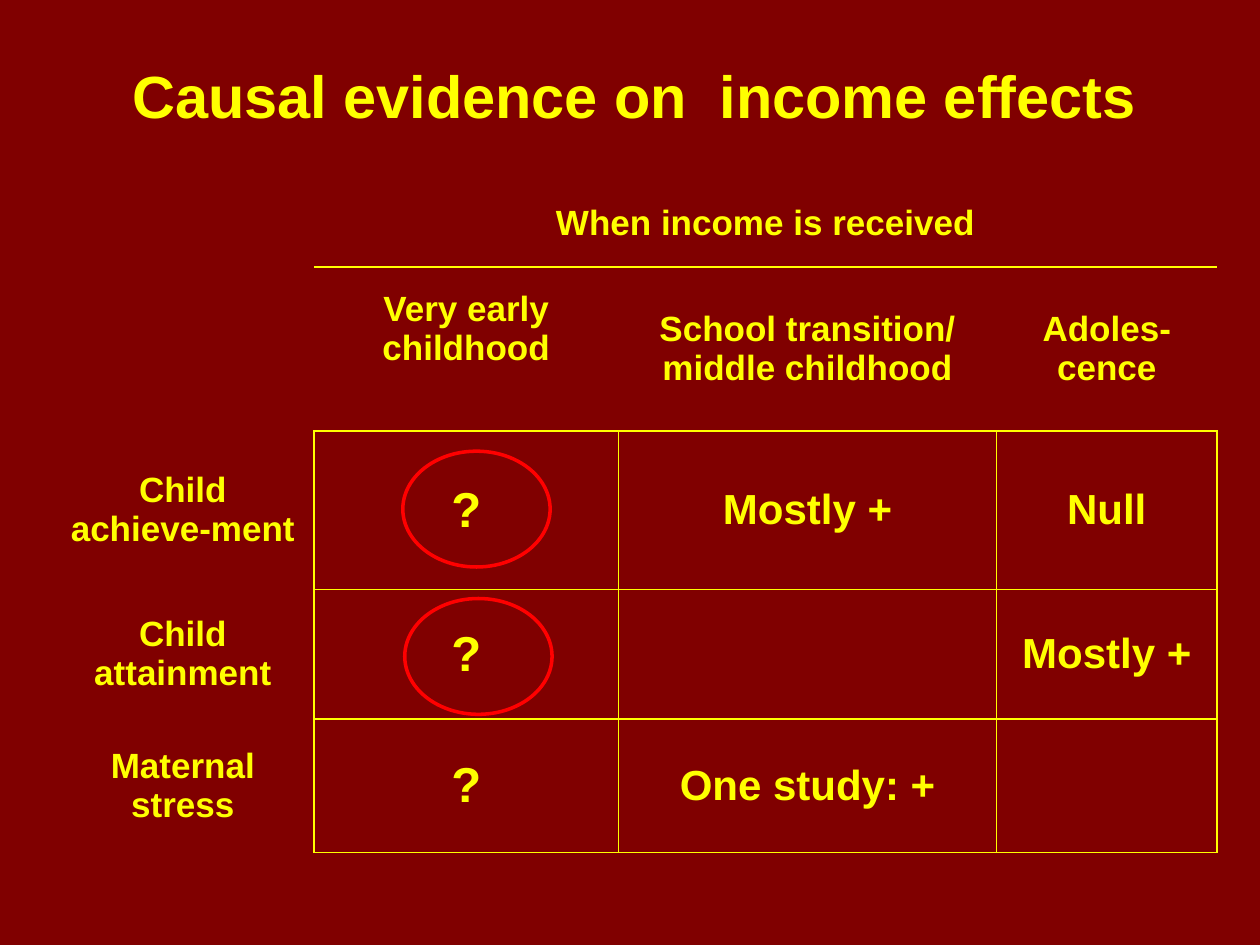
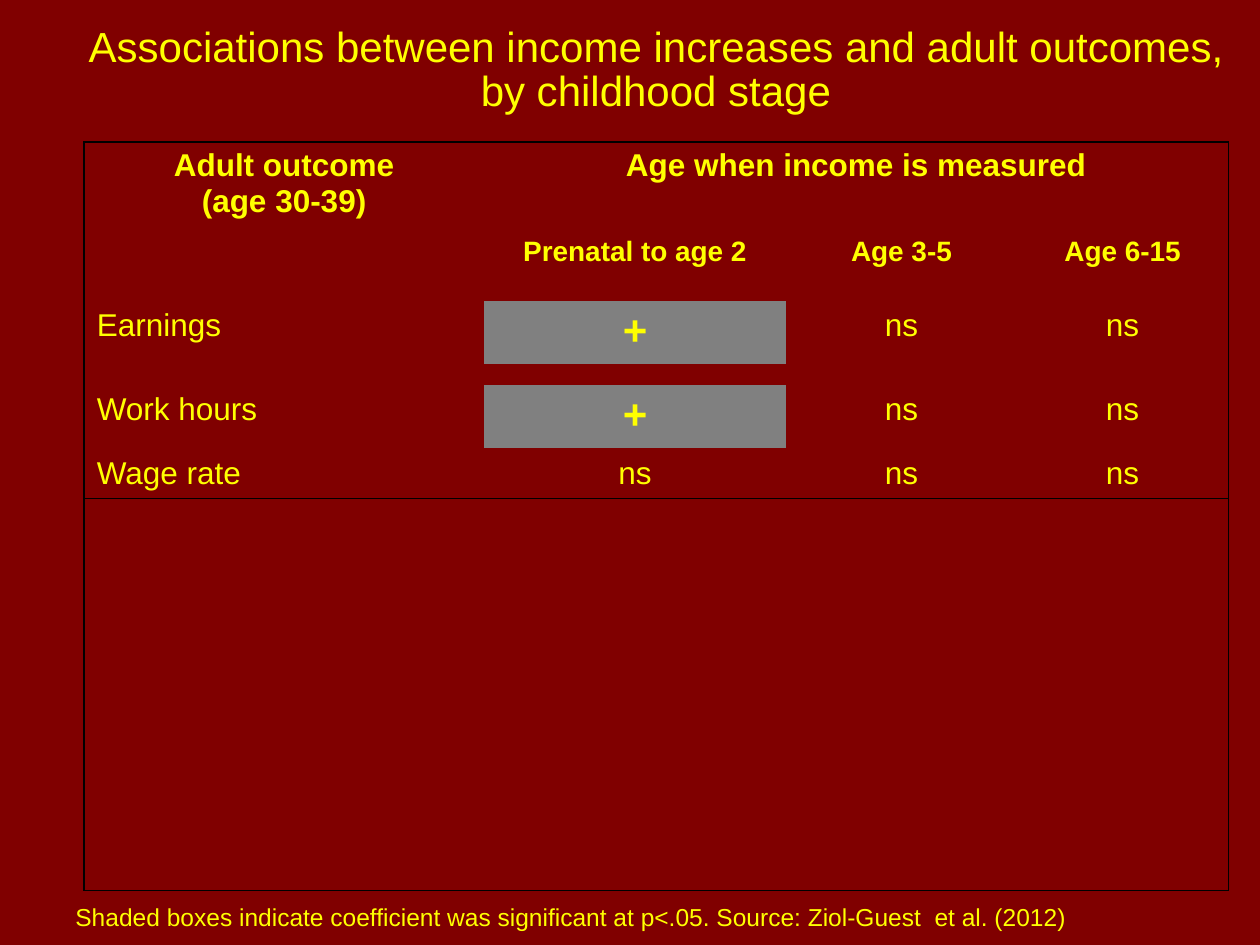
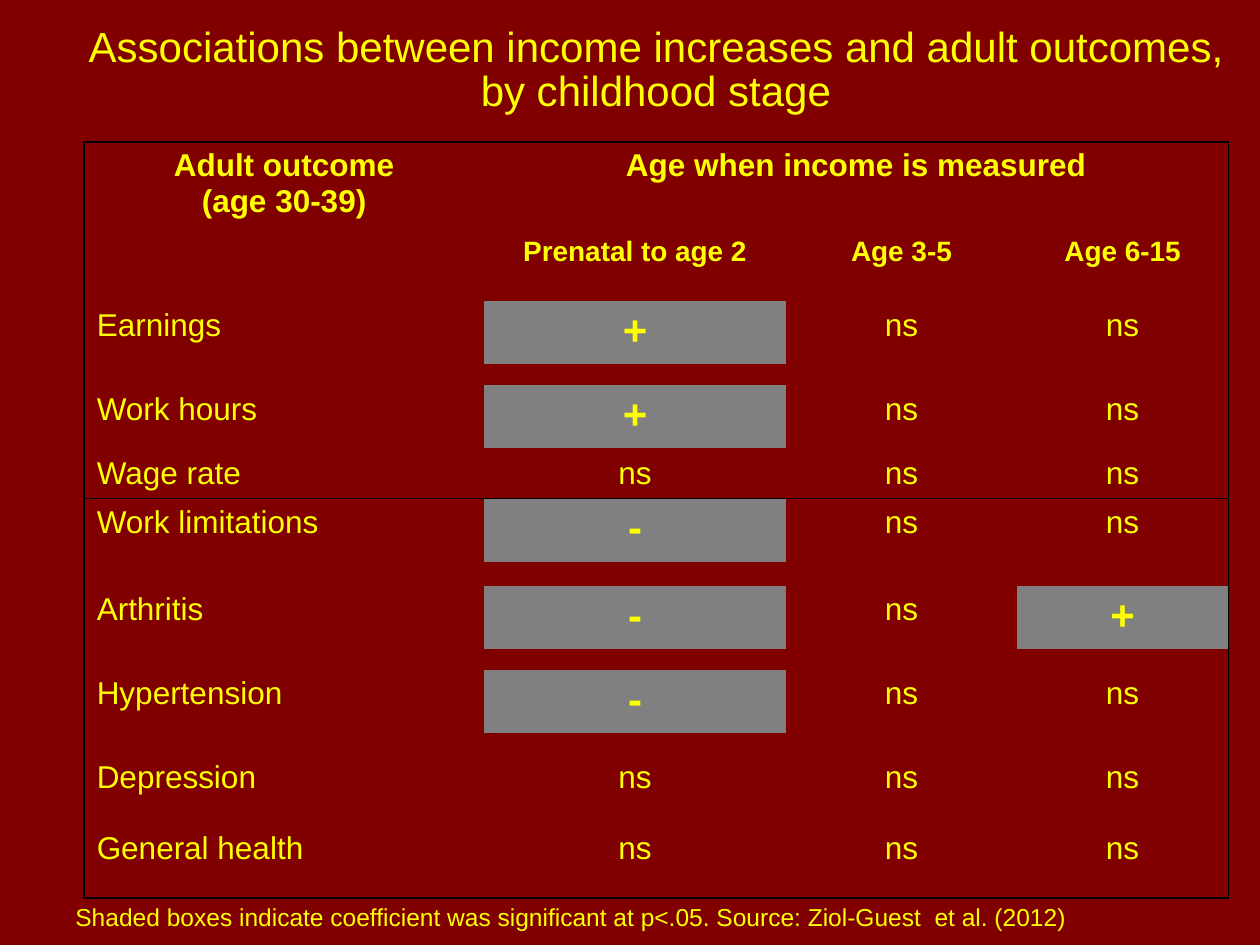
import pptx
import pptx.util
import pptx.dml.color
import pptx.enum.shapes
import pptx.enum.text
import pptx.oxml.ns
from lxml import etree

Pt = pptx.util.Pt
rgb = pptx.dml.color.RGBColor.from_string
qn = pptx.oxml.ns.qn
LEFT = pptx.enum.text.PP_ALIGN.LEFT
CENTER = pptx.enum.text.PP_ALIGN.CENTER
TOP = pptx.enum.text.MSO_ANCHOR.TOP
MIDDLE = pptx.enum.text.MSO_ANCHOR.MIDDLE

FONT = "Arial"
MAROON, YELLOW, RED, BLACK, GRAY = "800000", "FFFF00", "FF0000", "000000", "808080"


def write(tf, text, size, bold=False, align=CENTER, spacing=None):
    tf.word_wrap = True
    tf.text = text
    for p in tf.paragraphs:
        p.alignment = align
        if spacing:
            p.line_spacing = Pt(spacing)
        for r in p.runs:
            r.font.name, r.font.size, r.font.bold = FONT, Pt(size), bold
            r.font.color.rgb = rgb(YELLOW)
        if not p.runs:
            etree.SubElement(p._p, qn("a:endParaRPr"), sz=str(size * 100))


def style_cell(cell, sides, line, fill=None):
    tcPr = cell._tc.get_or_add_tcPr()
    for side in "LRTB":
        ln = etree.SubElement(tcPr, qn("a:ln" + side), w=str(Pt(1)))
        if side in sides:
            solid = etree.SubElement(ln, qn("a:solidFill"))
            etree.SubElement(solid, qn("a:srgbClr"), val=line)
        else:
            etree.SubElement(ln, qn("a:noFill"))
    if fill:
        cell.fill.solid()
        cell.fill.fore_color.rgb = rgb(fill)
    else:
        cell.fill.background()


prs = pptx.Presentation()
prs.slide_width, prs.slide_height = Pt(720), Pt(540)

# Three slides on the shared background, each with an unbanded table
tables = []
for left, top, widths, heights in [
    (29.6, 102.2, [149.8, 174.1, 216, 126], [50.4, 93.6, 90.7, 74, 76.2]),
] + 2 * [
    (48.1, 81.2, [228.5, 172.6, 21, 90, 21, 120.8],
     [48.6, 30.3, 10.2, 34.9, 12, 34.9, 27.9, 34.9, 13.7, 34.9, 12, 34.9, 12, 28, 11.4, 42.3]),
]:
    s = prs.slides.add_slide(prs.slide_layouts[6])
    s.background.fill.solid()
    s.background.fill.fore_color.rgb = rgb(MAROON)
    table = s.shapes.add_table(len(heights), len(widths), Pt(left), Pt(top),
                               Pt(sum(widths)), Pt(sum(heights))).table
    table.first_row = table.horz_banding = False
    for col, width in zip(table.columns, widths):
        col.width = Pt(width)
    for row, height in zip(table.rows, heights):
        row.height = Pt(height)
    table.cell(0, 1).merge(table.cell(0, len(widths) - 1))
    tables.append(table)

# Slide 1: causal evidence by stage
s, table = prs.slides[0], tables[0]
evidence = [
    ["", "When income is received", "", ""],
    ["", "Very early childhood", "School transition/ middle childhood", "Adoles-cence"],
    ["Child achieve-ment", "?", "Mostly +", "Null"],
    ["Child attainment", "?", "", "Mostly +"],
    ["Maternal stress", "?", "One study: +", ""],
]
for i, row in enumerate(evidence):
    for j, text in enumerate(row):
        cell = table.cell(i, j)
        if j == 0:
            sides = "R" if i > 1 else ""
        else:
            sides = ["B", "TB"][i] if i < 2 else "LRTB"
        size = 20 if i < 2 or j == 0 else 28 if text == "?" else 24
        write(cell.text_frame, text, size, True)
        cell.vertical_anchor = MIDDLE
        style_cell(cell, sides, YELLOW)
table.cell(1, 1).margin_bottom = Pt(26.6)

tb = s.shapes.add_textbox(Pt(47.5), Pt(30.2), Pt(630), Pt(48.2))
write(tb.text_frame, "Causal evidence on  income effects", 34, True)

# Rings around the open questions
for left, top in [(230.2, 257.8), (231.3, 342)]:
    ring = s.shapes.add_shape(pptx.enum.shapes.MSO_SHAPE.OVAL,
                              Pt(left), Pt(top), Pt(84.2), Pt(66.2))
    ring.shadow.inherit = False
    ring.fill.background()
    ring.line.color.rgb = rgb(RED)
    ring.line.width = Pt(2)

# Slides 2 and 3: adult outcomes, first the work rows and then all rows
headers = {
    (0, 0): "Adult outcome\n(age 30-39)",
    (0, 1): "Age when income is measured",
    (1, 1): "Prenatal to age 2",
    (1, 3): "Age 3-5",
    (1, 5): "Age 6-15",
}
outcomes = [
    (3, "Earnings", "+", "ns", "ns"),
    (5, "Work hours", "+", "ns", "ns"),
    (6, "Wage rate", "ns", "ns", "ns"),
    (7, "Work limitations", "-", "ns", "ns"),
    (9, "Arthritis", "-", "ns", "+"),
    (11, "Hypertension", "-", "ns", "ns"),
    (13, "Depression", "ns", "ns", "ns"),
    (15, "General health", "ns", "ns", "ns"),
]
for s, table, shown in zip(list(prs.slides)[1:], tables[1:], [3, 8]):
    texts = dict(headers)
    for i, *values in outcomes[:shown]:
        texts.update({(i, j): text for j, text in zip([0, 1, 3, 5], values)})

    for i in range(len(table.rows)):
        for j in range(len(table.columns)):
            cell, text = table.cell(i, j), texts.get((i, j), "")
            sides = "L" if j == 0 else ""
            sides += "R" if j == 5 or (i, j) == (0, 1) else ""
            sides += "T" if i in (0, 7) else ""
            sides += "B" if i in (6, 15) else ""
            marked = text in ("+", "-")
            size = 24 if marked else 16 if i == 1 else 18 if text else 2
            write(cell.text_frame, text, size, marked or i < 2,
                  LEFT if j == 0 and i > 1 else CENTER)
            cell.vertical_anchor = MIDDLE if i == 6 else TOP
            style_cell(cell, sides, BLACK, GRAY if marked else None)

    # Title and source note
    tb = s.shapes.add_textbox(Pt(41.8), Pt(12.2), Pt(666), Pt(57.6))
    write(tb.text_frame, "Associations between income increases and adult outcomes, "
          "by childhood stage", 24, spacing=25)
    tb = s.shapes.add_textbox(Pt(36), Pt(504), Pt(624), Pt(32.2))
    write(tb.text_frame, "Shaded boxes indicate coefficient was significant at p<.05. "
          "Source: Ziol-Guest  et al. (2012)", 14, align=LEFT, spacing=25)

prs.save("out.pptx")
